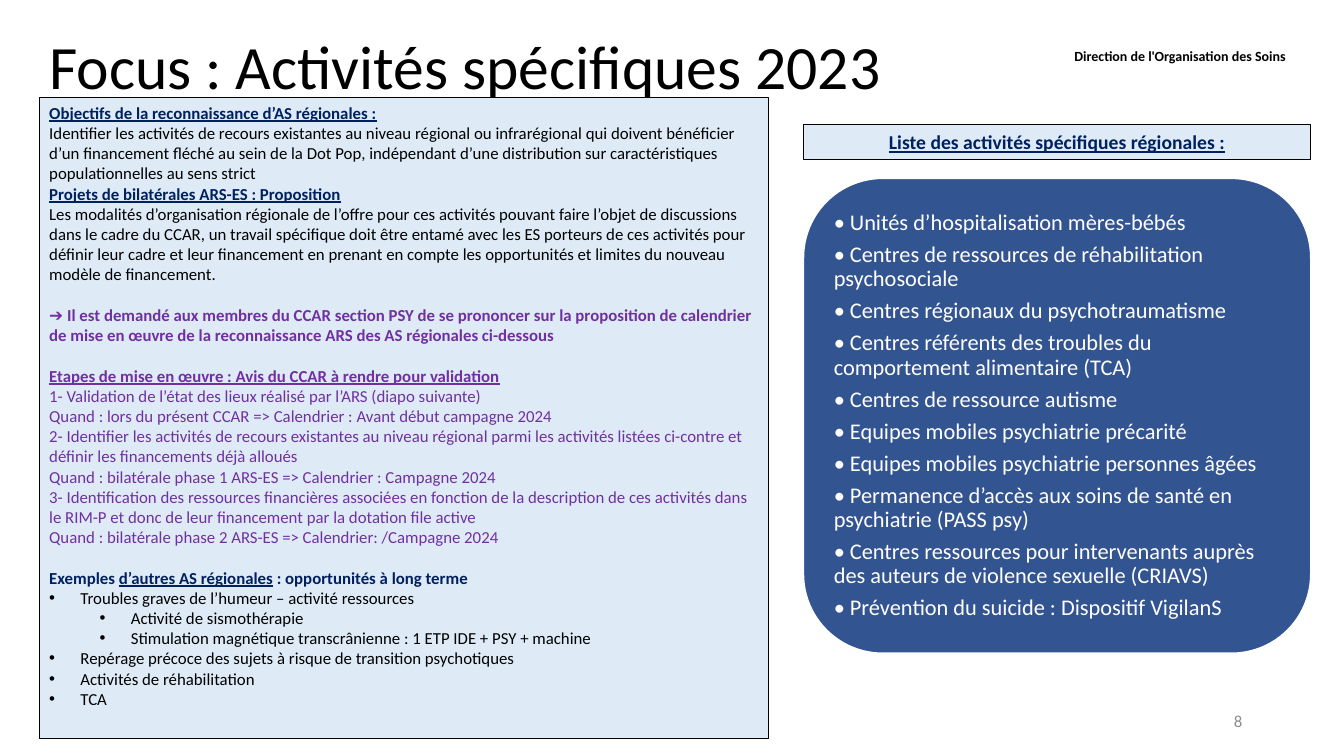
import pptx
import pptx.util
import pptx.dml.color
import pptx.enum.shapes
import pptx.enum.text
import pptx.oxml.ns
from lxml import etree

Inches, Pt = pptx.util.Inches, pptx.util.Pt
RGBColor = pptx.dml.color.RGBColor
SHAPES = pptx.enum.shapes.MSO_SHAPE
ALIGN = pptx.enum.text.PP_ALIGN
ANCHOR = pptx.enum.text.MSO_ANCHOR

FONT = "Calibri"
BLACK = RGBColor(0x00, 0x00, 0x00)
WHITE = RGBColor(0xFF, 0xFF, 0xFF)
GREY = RGBColor(0x8C, 0x8C, 0x8C)
NAVY = RGBColor(0x00, 0x20, 0x60)
PURPLE = RGBColor(0x70, 0x30, 0xA0)
BLUE = RGBColor(0x32, 0x54, 0x91)
PALE_BLUE = RGBColor(0xDE, 0xEB, 0xF7)

TITLE = "Focus : Activités spécifiques 2023"
DEPARTMENT = "Direction de l'Organisation des Soins"
PAGE_NUMBER = "8"
LIST_HEADING = "Liste des activités spécifiques régionales :"
ACTIVITIES = [
    "Unités d’hospitalisation mères-bébés",
    "Centres de ressources de réhabilitation psychosociale",
    "Centres régionaux du psychotraumatisme",
    "Centres référents des troubles du comportement alimentaire (TCA)",
    "Centres de ressource autisme",
    "Equipes mobiles psychiatrie précarité",
    "Equipes mobiles psychiatrie personnes âgées",
    "Permanence d’accès aux soins de santé en psychiatrie (PASS psy)",
    "Centres ressources pour intervenants auprès des auteurs de violence sexuelle (CRIAVS)",
    "Prévention du suicide : Dispositif VigilanS",
]

# Run styles: colour, bold, underline
STYLES = {
    "heading": (NAVY, True, True),
    "strong": (NAVY, True, False),
    "body": (BLACK, False, False),
    "request": (PURPLE, True, False),
    "steps": (PURPLE, True, True),
    "step": (PURPLE, False, False),
}
# Each section: paragraphs of (bullet level or None, [(style, text), ...])
SECTIONS = [
    [
        (None, [("heading", "Objectifs de la reconnaissance d’AS régionales :")]),
        (None, [("body", "Identifier les activités de recours existantes au niveau régional ou "
                 "infrarégional qui doivent bénéficier d’un financement fléché au sein de la Dot Pop, "
                 "indépendant d’une distribution sur caractéristiques populationnelles au sens strict")]),
        (None, [("heading", "Projets de bilatérales ARS-ES : Proposition")]),
        (None, [("body", "Les modalités d’organisation régionale de l’offre pour ces activités pouvant "
                 "faire l’objet de discussions dans le cadre du CCAR, un travail spécifique doit être "
                 "entamé avec les ES porteurs de ces activités pour définir leur cadre et leur "
                 "financement en prenant en compte les opportunités et limites du nouveau modèle de "
                 "financement.")]),
    ],
    [
        (None, [("request", "➔ Il est demandé aux membres du CCAR section PSY de se prononcer sur la "
                 "proposition de calendrier de mise en œuvre de la reconnaissance ARS des AS "
                 "régionales ci-dessous")]),
    ],
    [
        (None, [("steps", "Etapes de mise en œuvre : Avis du CCAR à rendre pour validation")]),
        (None, [("step", "1- Validation de l’état des lieux réalisé par l’ARS (diapo suivante)")]),
        (None, [("step", "Quand : lors du présent CCAR => Calendrier : Avant début campagne 2024")]),
        (None, [("step", "2- Identifier les activités de recours existantes au niveau régional parmi les "
                 "activités listées ci-contre et définir les financements déjà alloués")]),
        (None, [("step", "Quand : bilatérale phase 1 ARS-ES => Calendrier : Campagne 2024")]),
        (None, [("step", "3- Identification des ressources financières associées en fonction de la "
                 "description de ces activités dans le RIM-P et donc de leur financement par la "
                 "dotation file active")]),
        (None, [("step", "Quand : bilatérale phase 2 ARS-ES => Calendrier: /Campagne 2024")]),
    ],
    [
        (None, [("strong", "Exemples "), ("heading", "d’autres AS régionales"),
                ("strong", " : opportunités à long terme")]),
        (0, [("body", "Troubles graves de l’humeur – activité ressources")]),
        (1, [("body", "Activité de sismothérapie")]),
        (1, [("body", "Stimulation magnétique transcrânienne : 1 ETP IDE + PSY + machine")]),
        (0, [("body", "Repérage précoce des sujets à risque de transition psychotiques")]),
        (0, [("body", "Activités de réhabilitation")]),
        (0, [("body", "TCA")]),
    ],
]
SECTION_GAP = Pt(14.65)  # one line of 12 pt text
RIGHT_LEFT, RIGHT_WIDTH = 7.97, 5.03


def add_run(paragraph, text, size, color, bold=False, underline=False):
    run = paragraph.add_run()
    run.text = text
    font = run.font
    font.name, font.size, font.bold, font.underline = FONT, Pt(size), bold, underline
    font.color.rgb = color


def prepare_frame(shape, anchor, inset=None):
    frame = shape.text_frame
    frame.word_wrap = True
    frame.vertical_anchor = anchor
    if inset is not None:
        frame.margin_left = frame.margin_right = Inches(inset)
        frame.margin_top = frame.margin_bottom = Inches(inset)
    return frame


def add_text(slide, box, text, size, color, align=ALIGN.LEFT, bold=False, inset=None):
    label = slide.shapes.add_textbox(*map(Inches, box))
    paragraph = prepare_frame(label, ANCHOR.MIDDLE, inset).paragraphs[0]
    paragraph.alignment = align
    add_run(paragraph, text, size, color, bold)
    return paragraph


def add_panel(slide, kind, box, fill, line, line_width):
    panel = slide.shapes.add_shape(kind, *map(Inches, box))
    panel.shadow.inherit = False
    panel.fill.solid()
    panel.fill.fore_color.rgb = fill
    panel.line.color.rgb = line
    panel.line.width = Pt(line_width)
    return panel


def next_paragraph(frame, first):
    return frame.paragraphs[0] if first else frame.add_paragraph()


def set_bullet(paragraph, level):
    paragraph.level = level
    properties = paragraph._p.get_or_add_pPr()
    properties.set("marL", str(Inches(0.31 + 0.5 * level)))
    properties.set("indent", str(Inches(-0.31)))
    font = etree.SubElement(properties, pptx.oxml.ns.qn("a:buFont"))
    font.set("typeface", "Arial")
    bullet = etree.SubElement(properties, pptx.oxml.ns.qn("a:buChar"))
    bullet.set("char", "•")


def add_activities(slide):
    add_panel(slide, SHAPES.ROUNDED_RECTANGLE, (RIGHT_LEFT, 1.77, RIGHT_WIDTH, 4.71), BLUE, WHITE, 1)
    listing = slide.shapes.add_textbox(*map(Inches, (8.2, 2, 4.57, 4.25)))
    frame = prepare_frame(listing, ANCHOR.MIDDLE, 0.07)
    for index, activity in enumerate(ACTIVITIES):
        paragraph = next_paragraph(frame, index == 0)
        paragraph.line_spacing = 0.9
        paragraph.space_after = Pt(5.6)
        add_run(paragraph, "• " + activity, 16, WHITE)

    heading = add_panel(slide, SHAPES.RECTANGLE, (RIGHT_LEFT, 1.24, RIGHT_WIDTH, 0.34),
                        PALE_BLUE, BLACK, 0.75)
    paragraph = prepare_frame(heading, ANCHOR.TOP).paragraphs[0]
    paragraph.alignment = ALIGN.CENTER
    add_run(paragraph, LIST_HEADING, 14, *STYLES["heading"])


def add_objectives(slide):
    panel = add_panel(slide, SHAPES.RECTANGLE, (0.39, 0.97, 7.23, 6.36), PALE_BLUE, BLACK, 0.75)
    frame = prepare_frame(panel, ANCHOR.TOP)
    for section_index, section in enumerate(SECTIONS):
        for index, (level, runs) in enumerate(section):
            paragraph = next_paragraph(frame, section_index == index == 0)
            paragraph.alignment = ALIGN.LEFT
            if section_index and index == 0:
                paragraph.space_before = SECTION_GAP
            if level is not None:
                set_bullet(paragraph, level)
            for style, text in runs:
                add_run(paragraph, text, 12, *STYLES[style])


def main():
    presentation = pptx.Presentation()
    presentation.slide_width, presentation.slide_height = Inches(13.33), Inches(7.5)
    slide = presentation.slides.add_slide(presentation.slide_layouts[6])
    add_text(slide, (9.42, 6.95, 3, 0.4), PAGE_NUMBER, 12, GREY, ALIGN.RIGHT)
    add_text(slide, (4.18, 0.29, 8.57, 0.52), DEPARTMENT, 10, BLACK, ALIGN.RIGHT, True, 0)
    title = add_text(slide, (0.39, 0.29, 12.28, 0.79), TITLE, 44, BLACK)
    title.line_spacing = 0.9
    add_activities(slide)
    add_objectives(slide)
    presentation.save("out.pptx")


if __name__ == "__main__":
    main()
